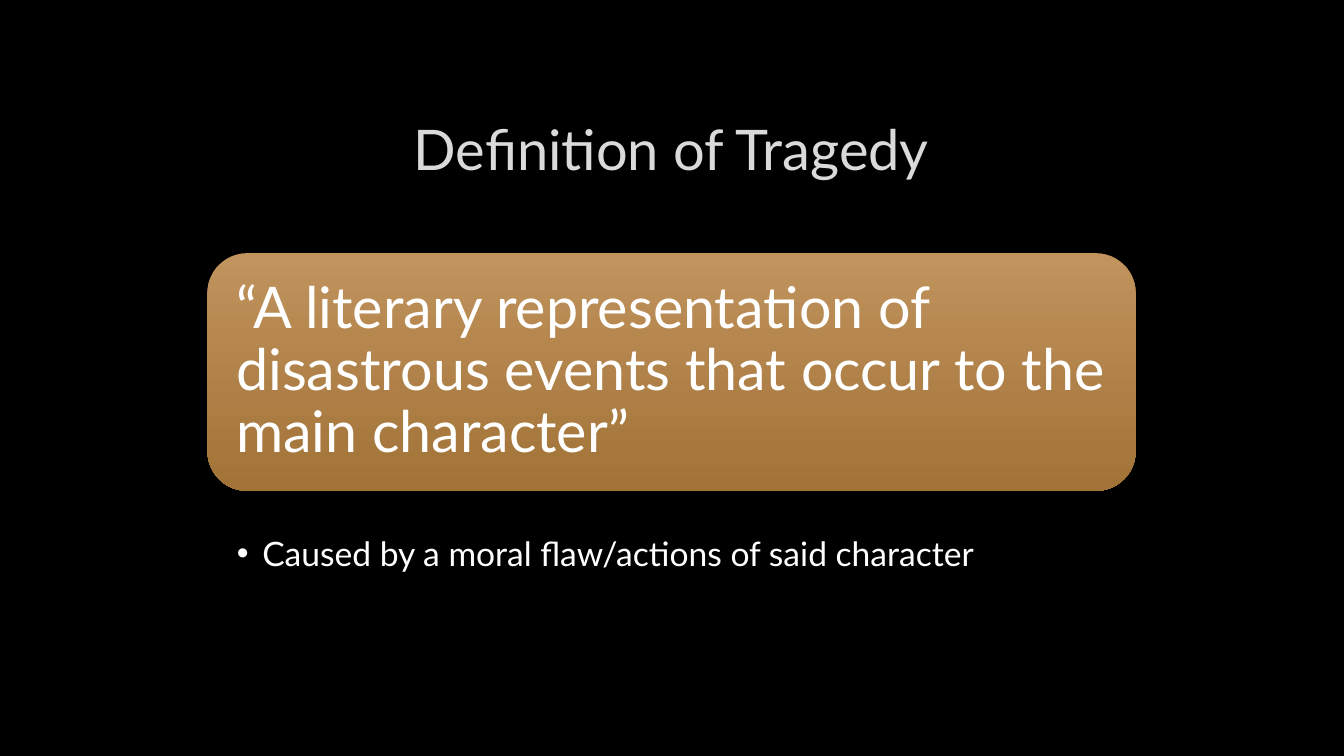
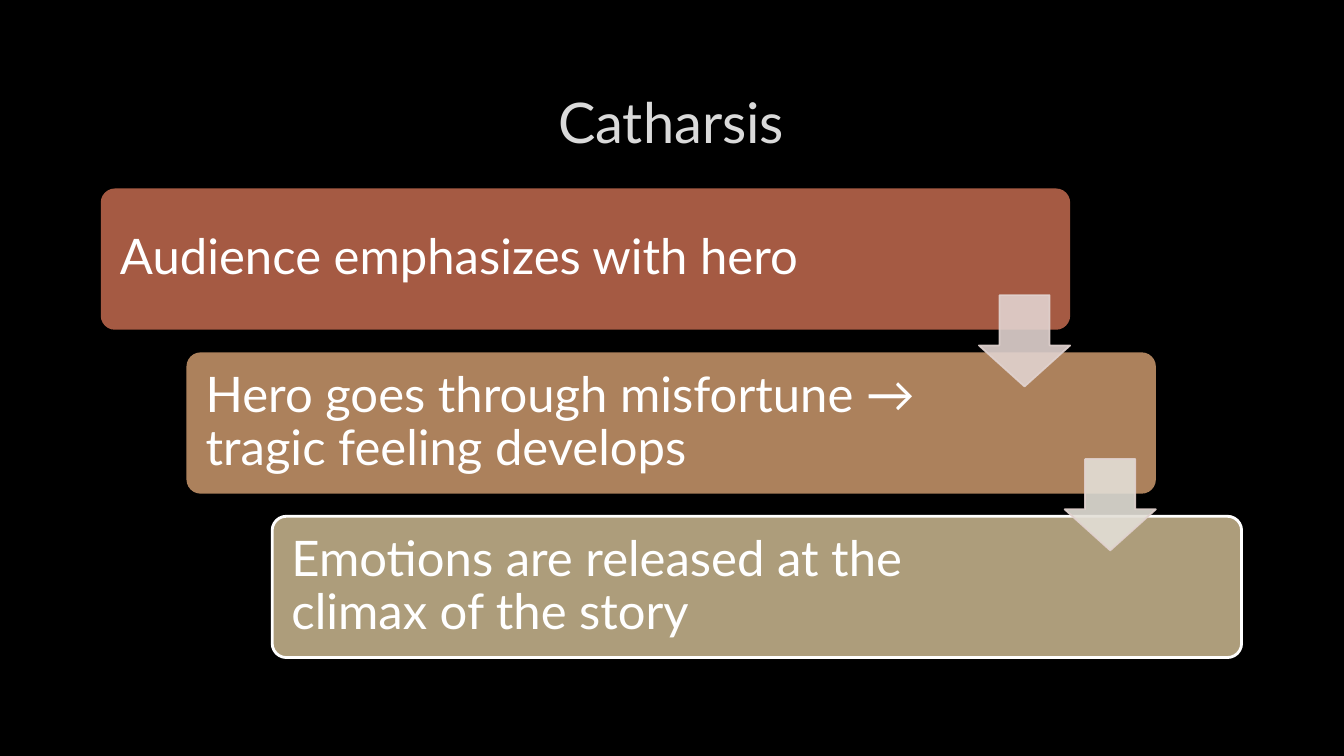
from lxml import etree
from pptx import Presentation
from pptx.dml.color import RGBColor
from pptx.enum.shapes import MSO_SHAPE
from pptx.enum.text import MSO_ANCHOR, PP_ALIGN
from pptx.oxml.ns import qn
from pptx.util import Cm, Pt

ROUNDED, DOWN_ARROW = MSO_SHAPE.ROUNDED_RECTANGLE, MSO_SHAPE.DOWN_ARROW
TOP, MIDDLE = MSO_ANCHOR.TOP, MSO_ANCHOR.MIDDLE
LEFT, CENTER = PP_ALIGN.LEFT, PP_ALIGN.CENTER

BLACK = RGBColor(0x00, 0x00, 0x00)
WHITE = RGBColor(0xFF, 0xFF, 0xFF)
SILVER = RGBColor(0xDA, 0xDA, 0xDA)
TAN = RGBColor(0xC1, 0x93, 0x5D)
BRONZE = RGBColor(0xA1, 0x73, 0x37)
BRICK = RGBColor(0xA5, 0x5A, 0x43)
CLAY = RGBColor(0xAC, 0x81, 0x5C)
KHAKI = RGBColor(0xAD, 0x9D, 0x7B)
ROSE = RGBColor(0xE1, 0xD2, 0xCF)
IVORY = RGBColor(0xE3, 0xDF, 0xD7)

FONT = "Lato"
MARGIN, CONTENT_WIDTH = 2.54, 28.75


def write(frame, text, size, color=WHITE, align=LEFT, anchor=MIDDLE,
          insets=(0.25, 0.13, 0.25, 0.13), spacing=0.9, bullet_indent=None):
    """Fill a text frame; insets are left, top, right, bottom in cm."""
    frame.word_wrap = True
    frame.vertical_anchor = anchor
    (frame.margin_left, frame.margin_top,
     frame.margin_right, frame.margin_bottom) = map(Cm, insets)
    paragraph = frame.paragraphs[0]
    paragraph.alignment = align
    paragraph.line_spacing = spacing
    run = paragraph.add_run()
    run.text = text
    run.font.name, run.font.size = FONT, Pt(size)
    run.font.color.rgb = color
    if bullet_indent:
        properties = paragraph._p.get_or_add_pPr()
        properties.set("marL", str(Cm(bullet_indent)))
        properties.set("indent", str(-Cm(bullet_indent)))
        etree.SubElement(properties, qn("a:buFont"), typeface="Arial")
        etree.SubElement(properties, qn("a:buChar"), char="•")


def set_opacity(fill_format, percent):
    """Make a solid fill partly transparent."""
    color = fill_format._xPr.find(qn("a:solidFill"))[0]
    etree.SubElement(color, qn("a:alpha"), val=str(percent * 1000))


class Deck:
    def __init__(self):
        self.presentation = Presentation()
        self.presentation.slide_width = Cm(33.87)
        self.presentation.slide_height = Cm(19.05)
        self.slide = None

    def new_slide(self, title, title_top):
        self.slide = self.presentation.slides.add_slide(
            self.presentation.slide_layouts[6])
        background = self.slide.background.fill
        background.solid()
        background.fore_color.rgb = BLACK
        self.text(title, MARGIN, title_top, CONTENT_WIDTH, 2.69,
                  size=40, color=SILVER, align=CENTER, spacing=1.0)

    def text(self, text, left, top, width, height, **style):
        box = self.slide.shapes.add_textbox(
            Cm(left), Cm(top), Cm(width), Cm(height))
        write(box.text_frame, text, **style)

    def shape(self, preset, left, top, width, height, colors,
              adjustments=(), outline=None, outline_width=1):
        """Add a preset shape; two colours make a top-to-bottom gradient."""
        shape = self.slide.shapes.add_shape(
            preset, Cm(left), Cm(top), Cm(width), Cm(height))
        shape.shadow.inherit = False
        for index, value in enumerate(adjustments):
            shape.adjustments[index] = value
        if len(colors) == 2:
            shape.fill.gradient()
            shape.fill.gradient_angle = 270
            for stop, color in zip(shape.fill.gradient_stops, colors):
                stop.color.rgb = color
        else:
            shape.fill.solid()
            shape.fill.fore_color.rgb = colors[0]
        if outline is None:
            shape.line.fill.background()
        else:
            shape.line.color.rgb = outline
            shape.line.width = Pt(outline_width)
        return shape

    def arrow(self, left, top, size, color):
        arrow = self.shape(DOWN_ARROW, left, top, size, size, [color],
                           adjustments=(0.55, 0.45),
                           outline=ROSE, outline_width=1.25)
        set_opacity(arrow.fill, 90)
        set_opacity(arrow.line.fill, 90)


def build_definition(deck):
    deck.new_slide("Definition of Tragedy", title_top=2.39)
    left, width = 5.23, 23.39
    quote = deck.shape(ROUNDED, left, 6.38, width, 5.99, [TAN, BRONZE])
    write(quote.text_frame,
          "“A literary representation of disastrous events "
          "that occur to the main character”",
          size=41, insets=(0.43,) * 4)
    deck.text("Caused by a moral flaw/actions of said character",
              left, 13.46, width, 1.1, size=24, anchor=TOP,
              insets=(0.74, 0.08, 0.48, 0.08), bullet_indent=0.64)


def build_catharsis(deck):
    deck.new_slide("Catharsis", title_top=1.7)
    steps = [
        ("Audience emphasizes with hero", BRICK, None),
        ("Hero goes through misfortune → tragic feeling develops", CLAY, None),
        ("Emotions are released at the climax of the story", KHAKI, WHITE),
    ]
    width, height, arrow_size = 24.43, 3.56, 2.3
    corners = [(MARGIN + 2.16 * i, 4.75 + 4.13 * i) for i in range(len(steps))]
    for (left, top), (text, color, outline) in zip(corners, steps):
        step = deck.shape(ROUNDED, left, top, width, height, [color],
                          adjustments=(0.1,), outline=outline, outline_width=2)
        write(step.text_frame, text, size=35, insets=(0.38, 0.38, 4.83, 0.38))
    for (left, top), color in zip(corners, (ROSE, IVORY)):
        deck.arrow(left + width - arrow_size, top + 2.69, arrow_size, color)


def main():
    deck = Deck()
    build_definition(deck)
    build_catharsis(deck)
    deck.presentation.save("out.pptx")


if __name__ == "__main__":
    main()
